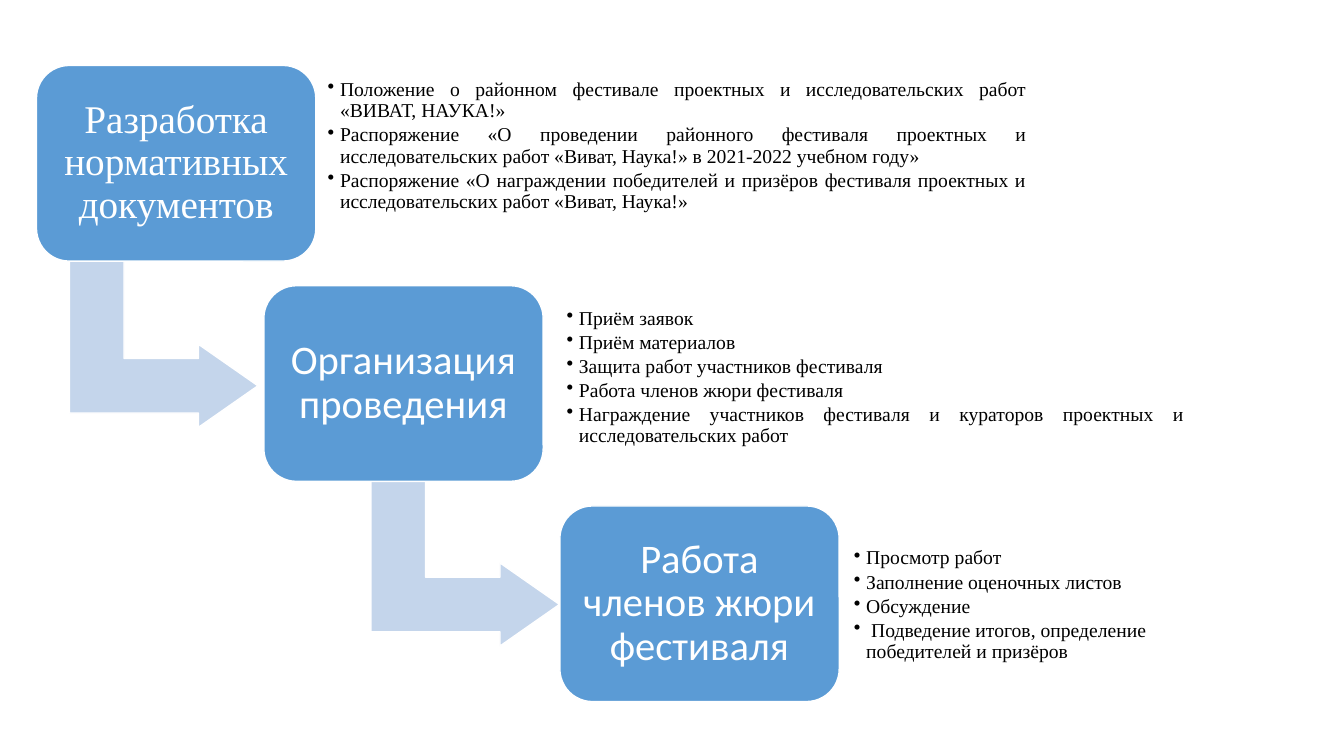
from pptx import Presentation
from pptx.dml.color import RGBColor
from pptx.enum.shapes import MSO_SHAPE as Kind
from pptx.enum.text import MSO_ANCHOR as Anchor, PP_ALIGN as Align
from pptx.oxml.ns import qn
from pptx.util import Cm, Pt
from lxml.etree import SubElement

WHITE = RGBColor(0xFF, 0xFF, 0xFF)
BLACK = RGBColor(0, 0, 0)
BLUE = RGBColor(0x5B, 0x9B, 0xD5)
PALE = RGBColor(0xC4, 0xD5, 0xEB)

SERIF = "Times New Roman"
TOP, STEP = 1.65, 5.55
BOX_W, BOX_H = 7.04, 4.93
NOTE_H = 3.99
INDENT = Cm(0.31)

# title, font, size, box left, note (left, top, width, bottom inset), align, items
STAGES = [
    ("Разработка нормативных документов", SERIF, 28, 0.92,
     (8.1, 2.21, 17.93, 1.2), Align.JUSTIFY, [
         "Положение о районном фестивале проектных и исследовательских работ «ВИВАТ, НАУКА!»",
         "Распоряжение «О проведении районного фестиваля проектных и исследовательских работ "
         "«Виват, Наука!» в 2021-2022 учебном году»",
         "Распоряжение «О награждении победителей и призёров фестиваля проектных и "
         "исследовательских работ «Виват, Наука!»"]),
    ("Организация проведения", "Calibri", 29, 6.65,
     (14.12, 7.52, 15.88, 0.16), Align.JUSTIFY, [
         "Приём заявок",
         "Приём материалов",
         "Защита работ участников фестиваля",
         "Работа членов жюри фестиваля",
         "Награждение участников фестиваля и кураторов проектных и исследовательских работ"]),
    ("Работа членов жюри фестиваля", "Calibri", 29, 14.11,
     (21.36, 13.26, 10.24, 0.16), Align.LEFT, [
         "Просмотр работ",
         "Заполнение оценочных листов",
         "Обсуждение",
         " Подведение итогов, определение победителей и призёров"]),
]
ARROWS = [(2.03, 6.3), (9.63, 11.81)]

deck = Presentation()
deck.slide_width, deck.slide_height = Cm(33.87), Cm(19.05)
slide = deck.slides.add_slide(deck.slide_layouts[6])
shapes = slide.shapes


def add_block(kind, left, top, width, height, color, adjust):
    block = shapes.add_shape(kind, Cm(left), Cm(top), Cm(width), Cm(height))
    block.shadow.inherit = False
    block.fill.solid()
    block.fill.fore_color.rgb = color
    block.line.color.rgb = WHITE
    block.line.width = Pt(1)
    for i, value in enumerate(adjust):
        block.adjustments[i] = value
    return block


def write(frame, lines, inset, bottom, align, name, size, color):
    """Fill a frame with one paragraph per line, centred vertically."""
    form = dict(word_wrap=True, vertical_anchor=Anchor.MIDDLE,
                margin_left=Cm(inset), margin_right=Cm(inset),
                margin_top=Cm(inset), margin_bottom=Cm(bottom))
    for key, value in form.items():
        setattr(frame, key, value)
    for i, line in enumerate(lines):
        para = frame.add_paragraph() if i else frame.paragraphs[0]
        para.text = line
        para.alignment = align
        para.line_spacing = 0.9
        para.space_after = Pt(0.15 * size)
        font = para.runs[0].font
        font.name, font.size = name, Pt(size)
        font.color.rgb = color


for row, (title, face, size, left, note, align, items) in enumerate(STAGES):
    if row < len(ARROWS):
        arrow = add_block(Kind.BENT_UP_ARROW, *ARROWS[row], 4.19, 4.75, PALE,
                          (0.328, 0.25, 0.358))
        arrow.rotation = 90
    box = add_block(Kind.ROUNDED_RECTANGLE, left, TOP + row * STEP, BOX_W, BOX_H,
                    BLUE, (0.167,))
    write(box.text_frame, [title], 0.3, 0.3, Align.CENTER, face, size, WHITE)

    x, y, width, bottom = note
    text = shapes.add_textbox(Cm(x), Cm(y), Cm(width), Cm(NOTE_H)).text_frame
    write(text, items, 0.16, bottom, align, SERIF, 14, BLACK)
    for para in text.paragraphs:
        props = para._p.get_or_add_pPr()
        props.set("marL", str(INDENT))
        props.set("indent", str(-INDENT))
        SubElement(props, qn("a:buChar")).set("char", "•")

deck.save("out.pptx")
